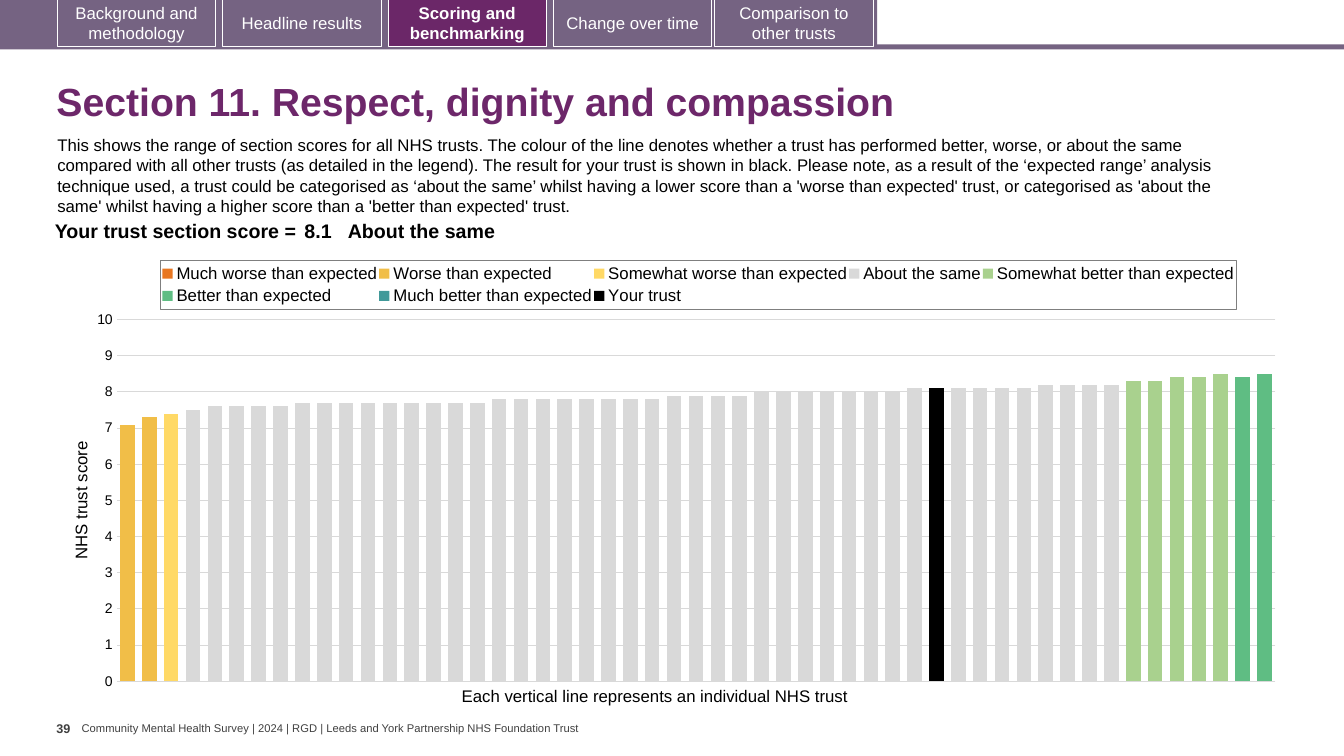
from copy import deepcopy
from dataclasses import dataclass

from pptx import Presentation
from pptx.chart.data import CategoryChartData
from pptx.dml.color import RGBColor
from pptx.enum.chart import XL_CHART_TYPE as ChartType, XL_LEGEND_POSITION as LegendPos
from pptx.enum.chart import XL_TICK_MARK as Tick
from pptx.enum.shapes import MSO_SHAPE as Shape
from pptx.enum.text import MSO_ANCHOR as Anchor, PP_ALIGN as Align
from pptx.oxml import parse_xml
from pptx.oxml.ns import nsdecls
from pptx.util import Pt

PX = 9144  # 100 px to the inch


@dataclass(frozen=True)
class Theme:
    font: str = "Arial"
    chart_font: str = "Calibri"
    bar: str = "756382"
    active: str = "6B2768"
    title: str = "6D276A"
    ink: str = "000000"
    white: str = "FFFFFF"
    footer: str = "404040"
    grid: str = "D9D9D9"
    legend_line: str = "7F7F7F"
    title_size: int = 28
    score_size: int = 14
    text_size: int = 12
    axis_size: int = 10
    number_size: int = 9
    footer_size: int = 8


THEME = Theme()

TABS = [(57, "Background and methodology"), (221, "Headline results"),
        (385, "Scoring and benchmarking"), (549, "Change over time"),
        (709, "Comparison to other trusts")]
ACTIVE_TAB = "Scoring and benchmarking"

INTRO = ("This shows the range of section scores for all NHS trusts. The colour of the line denotes "
         "whether a trust has performed better, worse, or about the same compared with all other "
         "trusts (as detailed in the legend). The result for your trust is shown in black. Please "
         "note, as a result of the ‘expected range’ analysis technique used, a trust could be "
         "categorised as ‘about the same’ whilst having a lower score than a 'worse than expected' "
         "trust, or categorised as 'about the same' whilst having a higher score than a 'better "
         "than expected' trust.")

TRUST_COUNT = 53
ABOUT_THE_SAME = ([7.5] + [7.6] * 4 + [7.7] * 9 + [7.8] * 8 + [7.9] * 4
                  + [8] * 7 + [8.1] * 6 + [8.2] * 4)
# Band name, colour, position of its first trust, scores
BANDS = [("Much worse than expected", "E87722", 0, []),
         ("Worse than expected", "F1BE48", 0, [7.1, 7.3]),
         ("Somewhat worse than expected", "FFD966", 2, [7.4]),
         ("About the same", "D9D9D9", 3, ABOUT_THE_SAME),
         ("Somewhat better than expected", "A9D18E", 46, [8.3, 8.3, 8.4, 8.4, 8.5]),
         ("Better than expected", "5FBD83", 51, [8.4, 8.5]),
         ("Much better than expected", "419999", 0, []),
         ("Your trust", "000000", 37, [8.1])]


def emu(*lengths):
    return [length * PX for length in lengths]


def style(font, size, color=THEME.ink, bold=False, name=THEME.font):
    font.name, font.size, font.bold = name, Pt(size), bold
    font.color.rgb = RGBColor.from_string(color)


def add_rect(slide, box, fill):
    rect = slide.shapes.add_shape(Shape.RECTANGLE, *emu(*box))
    rect.shadow.inherit = False
    rect.fill.solid()
    rect.fill.fore_color.rgb = RGBColor.from_string(fill)
    rect.line.fill.background()
    return rect


def add_text(slide, box, text, size, color=THEME.ink, bold=False, wrap=False,
             side=10, edge=5, anchor=Anchor.TOP):
    frame = slide.shapes.add_textbox(*emu(*box)).text_frame
    frame.word_wrap, frame.vertical_anchor = wrap, anchor
    frame.margin_left = frame.margin_right = side * PX
    frame.margin_top = frame.margin_bottom = edge * PX
    frame.text = text
    style(frame.paragraphs[0].font, size, color, bold)


def add_tab_bar(slide, box):
    left, top, width, height = box
    add_rect(slide, (left, top + 44, width, height - 44), THEME.bar)
    add_rect(slide, (left, top, 870, 47), THEME.bar)
    for offset, label in TABS:
        active = label == ACTIVE_TAB
        tab = add_rect(slide, (left + offset, top - 1, 157, 47),
                       THEME.active if active else THEME.bar)
        tab.line.color.rgb = RGBColor.from_string(THEME.white)
        tab.line.width = Pt(0.75)
        tab.text_frame.vertical_anchor = Anchor.MIDDLE
        tab.text_frame.text = label
        caption = tab.text_frame.paragraphs[0]
        caption.alignment = Align.CENTER
        style(caption.font, THEME.text_size, THEME.white, active)


def add_heading(slide, box):
    heading = slide.shapes.title
    heading.left, heading.top, heading.width, heading.height = emu(*box)
    heading.text_frame.text = "Section 11. Respect, dignity and compassion"
    heading.text_frame.vertical_anchor = Anchor.MIDDLE
    line = heading.text_frame.paragraphs[0]
    line.alignment, line.line_spacing = Align.LEFT, 0.9
    style(line.font, THEME.title_size, THEME.title, True)


def add_score(slide, box):
    score = slide.shapes.add_table(1, 3, *emu(*box)).table
    score.first_row = score.horz_banding = False
    parts = [("Your trust section score =", 263, 4, Align.RIGHT),
             ("8.1", 47, 4, Align.LEFT), ("About the same", 860, 0, Align.LEFT)]
    for column, cell, (text, width, side, align) in zip(score.columns, score.rows[0].cells, parts):
        column.width = width * PX
        cell.fill.background()
        cell.margin_left = cell.margin_right = side * PX
        cell.margin_top = cell.margin_bottom = 4 * PX
        cell.text = text
        cell.text_frame.paragraphs[0].alignment = align
        style(cell.text_frame.paragraphs[0].font, THEME.score_size, bold=True)


def set_layout(parent, index, target, x, y, w, h):
    for old in parent.xpath("./c:layout"):
        parent.remove(old)
    inner = f'<c:layoutTarget val="{target}"/>' if target else ""
    parent.insert(index, parse_xml(
        f'<c:layout {nsdecls("c")}><c:manualLayout>{inner}'
        '<c:xMode val="edge"/><c:yMode val="edge"/>'
        f'<c:x val="{x}"/><c:y val="{y}"/><c:w val="{w}"/><c:h val="{h}"/>'
        '</c:manualLayout></c:layout>'))


def move_last_to_right_axis(area):
    bars, = area.xpath("./c:barChart")
    own_bars = deepcopy(bars)
    bars.remove(bars.xpath("./c:ser")[-1])
    for series in own_bars.xpath("./c:ser")[:-1]:
        own_bars.remove(series)
    bars.addnext(own_bars)
    hidden, right = (deepcopy(area.xpath(f"./c:{kind}")[0]) for kind in ("catAx", "valAx"))
    for extra in right.xpath("./c:majorGridlines | ./c:title"):
        right.remove(extra)
    for tag, value in (("axPos", "r"), ("tickLblPos", "none"), ("crosses", "max")):
        right.xpath(f"./c:{tag}")[0].set("val", value)
    area.xpath("./c:valAx")[0].addnext(right)
    right.addnext(hidden)
    for part in (own_bars, hidden, right):
        for link in part.xpath("./c:axId | ./c:crossAx"):
            link.set("val", link.get("val").lstrip("-"))


def add_scores_chart(slide, box):
    data = CategoryChartData(number_format="0.0")
    data.categories = [str(trust) for trust in range(1, TRUST_COUNT + 1)]
    for name, _, first, scores in BANDS:
        after = TRUST_COUNT - first - len(scores)
        data.add_series(name, [None] * first + scores + [None] * after)
    chart = slide.shapes.add_chart(ChartType.COLUMN_CLUSTERED, *emu(*box), data).chart
    chart.has_title = False
    style(chart.font, THEME.axis_size, name=THEME.chart_font)
    bars = chart.plots[0]
    bars.gap_width, bars.overlap, bars.vary_by_categories = 50, 100, False
    for series, (_, color, _, _) in zip(bars.series, BANDS):
        series.format.fill.solid()
        series.format.fill.fore_color.rgb = RGBColor.from_string(color)

    # Axes
    chart.category_axis.visible = False
    scale = chart.value_axis
    scale.minimum_scale, scale.maximum_scale, scale.major_unit = 0, 10, 1
    scale.major_tick_mark = scale.minor_tick_mark = Tick.NONE
    scale.tick_labels.number_format = "0"
    scale.tick_labels.number_format_is_linked = False
    style(scale.tick_labels.font, THEME.axis_size)
    scale.format.line.fill.background()
    grid = scale.major_gridlines.format.line
    grid.color.rgb, grid.width = RGBColor.from_string(THEME.grid), Pt(0.75)
    scale.axis_title.text_frame.text = "NHS trust score"
    style(scale.axis_title.text_frame.paragraphs[0].font, THEME.text_size)

    # Legend with a thin frame
    chart.has_legend = True
    chart.legend.position, chart.legend.include_in_layout = LegendPos.TOP, False
    style(chart.legend.font, THEME.text_size)
    legend, = chart.element.xpath(".//c:legend")
    set_layout(legend, 1, None, 0.076, 0.025, 0.878, 0.11)
    legend.xpath("./c:overlay")[0].addnext(parse_xml(
        f'<c:spPr {nsdecls("c", "a")}><a:ln w="9525"><a:solidFill>'
        f'<a:srgbClr val="{THEME.legend_line}"/></a:solidFill></a:ln></c:spPr>'))

    area, = chart.element.xpath(".//c:plotArea")
    set_layout(area, 0, "inner", 0.04, 0.158, 0.946, 0.808)
    move_last_to_right_axis(area)


def add_footer(slide, box):
    left, top, width, height = box
    add_text(slide, (left, top, 25, height), "39", THEME.number_size, THEME.footer, True, side=0)
    add_text(slide, (left + 25, top + 6, width - 25, 13),
             "Community Mental Health Survey | 2024 | RGD | "
             "Leeds and York Partnership NHS Foundation Trust",
             THEME.footer_size, THEME.footer, side=0, edge=0, anchor=Anchor.MIDDLE)


def main():
    deck = Presentation()
    deck.slide_width, deck.slide_height = emu(1333, 750)
    slide = deck.slides.add_slide(deck.slide_layouts[5])
    add_tab_bar(slide, (0, 0, 1333, 49))
    add_heading(slide, (46, 67, 1249, 72))
    add_text(slide, (47, 129, 1213, 91), INTRO, THEME.text_size, wrap=True)
    add_scores_chart(slide, (67, 247, 1215, 444))
    add_text(slide, (448, 675, 411, 30),
             "Each vertical line represents an individual NHS trust", THEME.text_size)
    add_score(slide, (35, 215, 1170, 31))
    add_footer(slide, (56, 710, 526, 40))
    deck.save("out.pptx")


if __name__ == "__main__":
    main()
